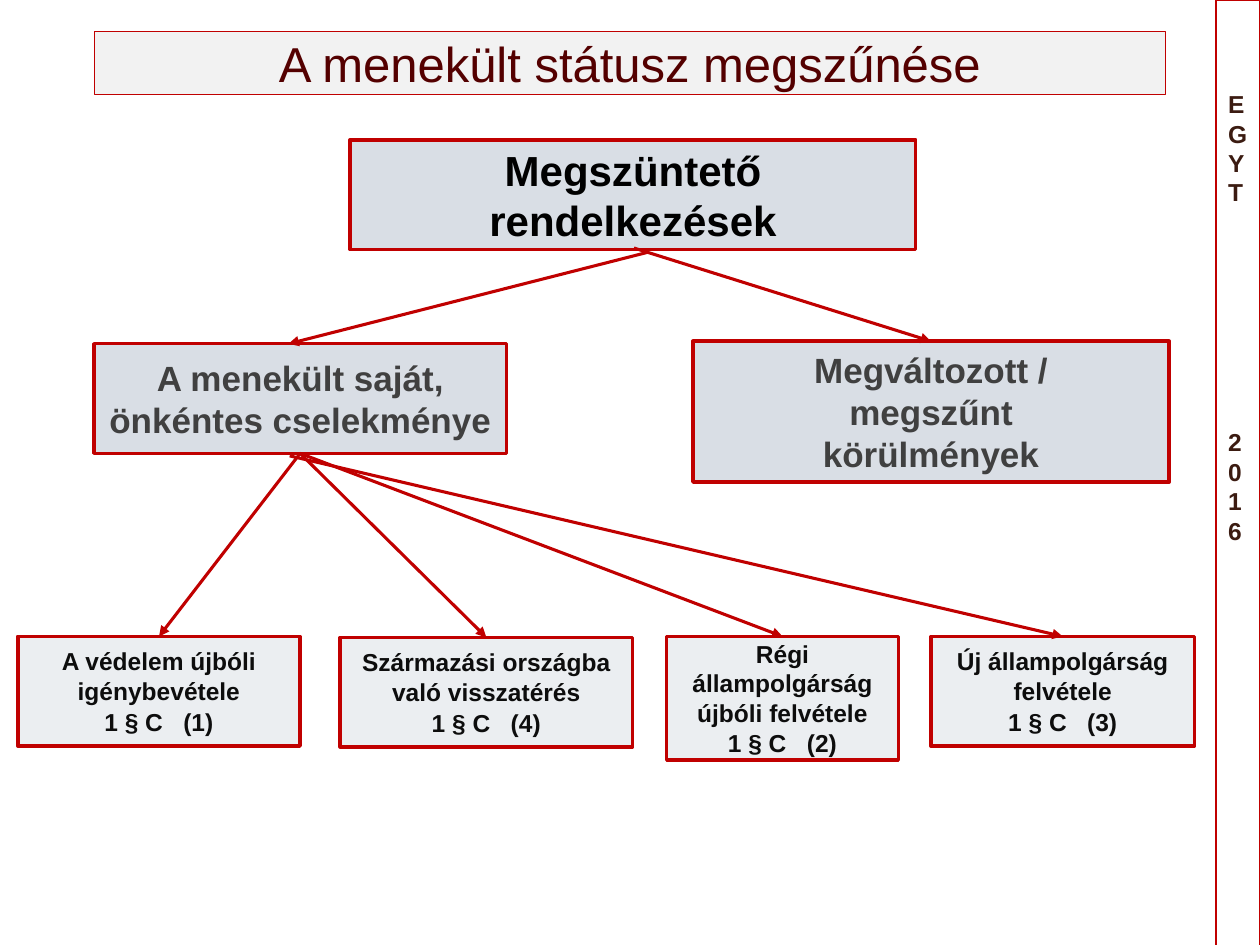
from lxml import etree
from pptx import Presentation, util as u
from pptx.dml import color
from pptx.enum import shapes, text
from pptx.oxml import ns


def rgb(value):
    return color.RGBColor.from_string(value)


class StatusSlide:
    RED = "C00000"
    GREY = "D9DEE5"
    FONT = "Arial"

    def __init__(self, deck):
        self.slide = deck.slides.add_slide(deck.slide_layouts[5])

    def frame(self, shape, fill, width):
        shape.fill.solid()
        shape.fill.fore_color.rgb = rgb(fill)
        shape.line.color.rgb = rgb(self.RED)
        shape.line.width = u.Pt(width)

    def label(self, shape, wording, size, ink, bold=True, gap=0,
              align=text.PP_ALIGN.CENTER, anchor=text.MSO_ANCHOR.MIDDLE):
        frame = shape.text_frame
        frame.text = wording
        frame.word_wrap = True
        frame.auto_size = text.MSO_AUTO_SIZE.NONE
        frame.vertical_anchor = anchor
        for para in frame.paragraphs:
            para.alignment = align
            para.space_before = u.Pt(gap)
            for span in para.runs:
                span.font.name = self.FONT
                span.font.size = u.Pt(size)
                span.font.bold = bold
                span.font.color.rgb = rgb(ink)

    def title(self, wording, left, top, width, height):
        title = self.slide.shapes.title
        title.left, title.top = u.Cm(left), u.Cm(top)
        title.width, title.height = u.Cm(width), u.Cm(height)
        self.frame(title, "F2F2F2", 0.75)
        self.label(title, wording, 28, "540000", bold=False)

    def rectangle(self, left, top, width, height, fill=GREY, line=2):
        box = self.slide.shapes.add_shape(
            shapes.MSO_SHAPE.RECTANGLE, u.Cm(left), u.Cm(top), u.Cm(width), u.Cm(height))
        box.shadow.inherit = False
        self.frame(box, fill, line)
        return box

    def box(self, wording, place, size, ink):
        box = self.rectangle(*place)
        self.label(box, wording, size, ink)
        return box

    def leaf(self, wording, place):
        box = self.rectangle(*place)
        # The first colour in the shape properties is the fill
        tint = box.element.spPr.find(".//" + ns.qn("a:srgbClr"))
        etree.SubElement(tint, ns.qn("a:alpha"), val="50000")
        self.label(box, wording, 14, "0D0D0D", gap=0.7)
        return box

    def sidebar(self, wording, place):
        bar = self.rectangle(*place, fill="FFFFFF", line=1.25)
        self.label(bar, wording, 14, "3B1B11", gap=126,
                   align=text.PP_ALIGN.LEFT, anchor=text.MSO_ANCHOR.TOP)
        bar.text_frame.paragraphs[0].space_before = u.Pt(0)
        bar.text_frame.margin_top = u.Cm(1.8)

    def arrow(self, start, target, shift=0):
        """Arrow from a point in cm to the top middle of a box."""
        line = self.slide.shapes.add_connector(
            shapes.MSO_CONNECTOR.STRAIGHT, u.Cm(start[0]), u.Cm(start[1]),
            target.left + target.width // 2 + u.Cm(shift), target.top)
        line.line.color.rgb = rgb(self.RED)
        line.line.width = u.Pt(1.75)
        properties = line.element.spPr
        etree.SubElement(properties.find(ns.qn("a:ln")), ns.qn("a:tailEnd"), type="triangle")
        etree.SubElement(properties, ns.qn("a:effectLst"))


def main():
    deck = Presentation()
    deck.slide_width, deck.slide_height = u.Cm(25.4), u.Cm(19.05)
    page = StatusSlide(deck)

    # Side strip and title
    page.sidebar("EGYT\n2016", (24.51, 0, 0.89, 19.79))
    page.title("A menekült státusz megszűnése", 1.9, 0.64, 21.59, 1.27)

    # Upper two levels
    page.box("Megszüntető rendelkezések", (7.06, 2.82, 11.4, 2.21), 24, "000000")
    own_act = page.box("A menekült saját, önkéntes cselekménye",
                       (1.9, 6.93, 8.31, 2.21), 20, "404040")
    changed = page.box("Megváltozott /\nmegszűnt\nkörülmények",
                       (13.97, 6.88, 9.6, 2.84), 20, "404040")

    # Voluntary acts, left to right
    acts = [
        ("A védelem újbóli igénybevétele", 1, (0.36, 12.83, 5.69, 2.21)),
        ("Származási országba való visszatérés", 4, (6.86, 12.85, 5.89, 2.21)),
        ("Régi állampolgárság újbóli felvétele", 2, (13.44, 12.83, 4.67, 2.49)),
        ("Új állampolgárság felvétele", 3, (18.77, 12.83, 5.31, 2.21)),
    ]
    leaves = [page.leaf(f"{act}\n1 § C   ({number})", place) for act, number, place in acts]

    # Arrows
    page.arrow((13.08, 5.08), own_act, shift=-0.24)
    page.arrow((12.78, 5), changed)
    for leaf in leaves[:3]:
        page.arrow((6.05, 9.14), leaf)
    page.arrow((5.84, 9.19), leaves[3])

    deck.save("out.pptx")


if __name__ == "__main__":
    main()
